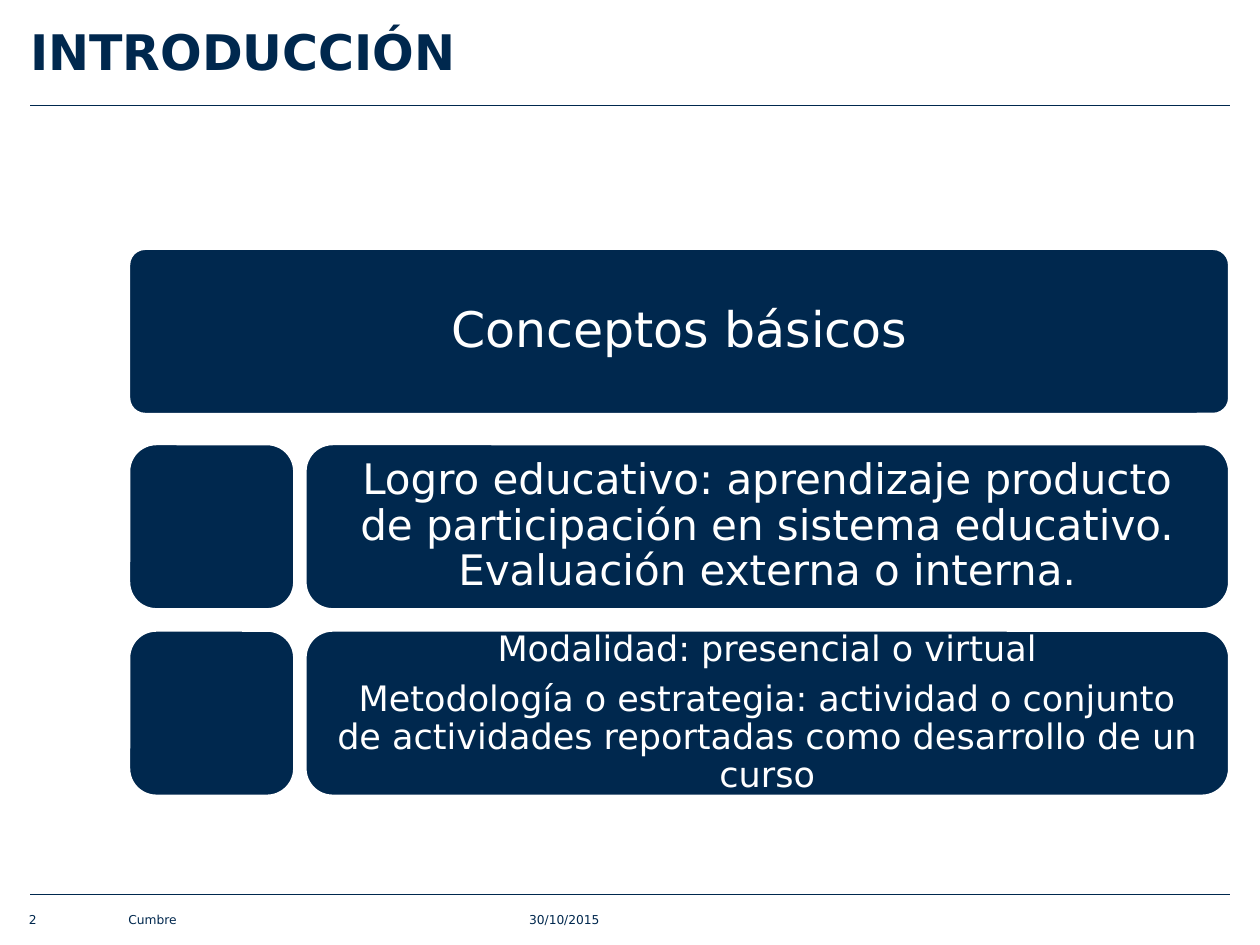
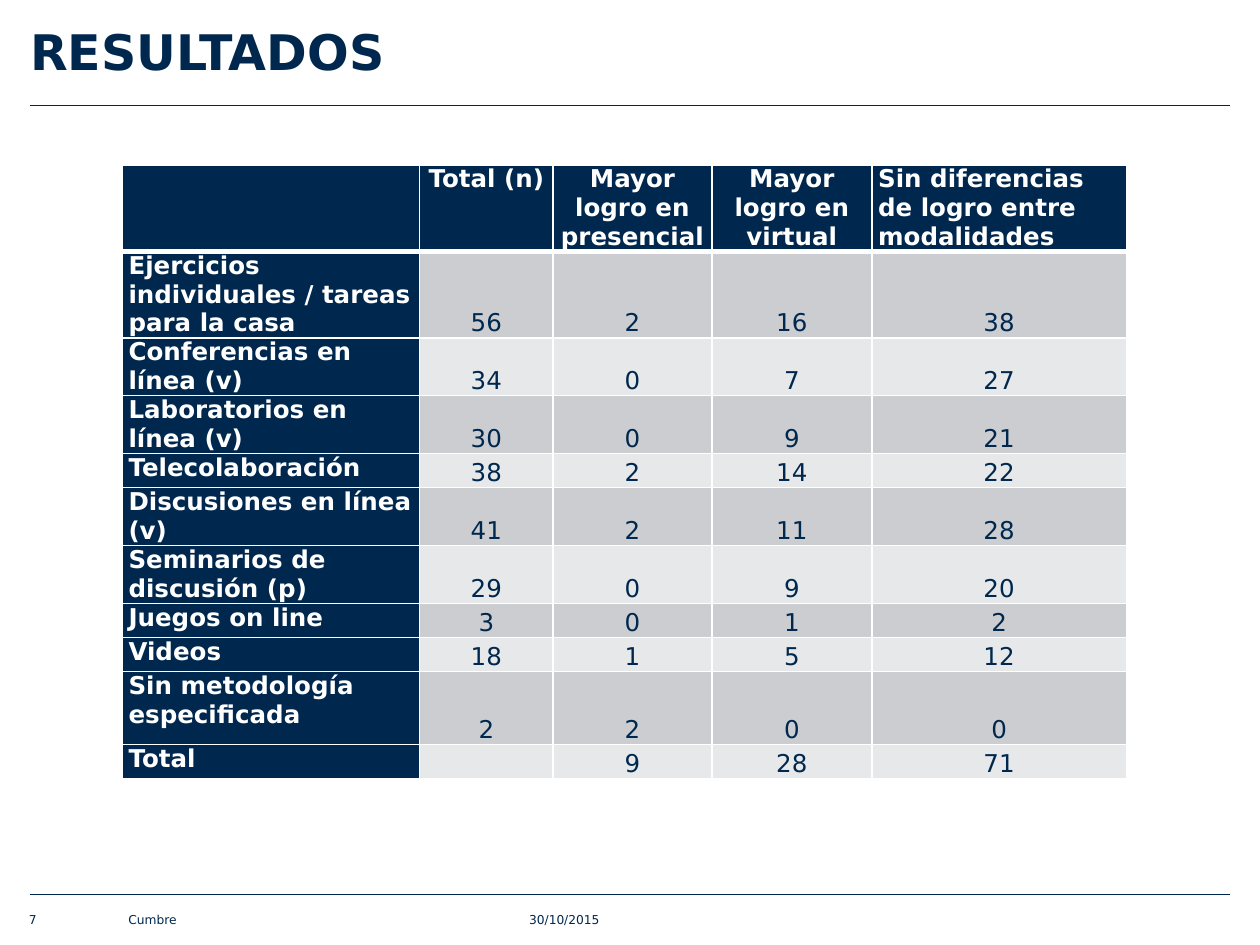
from dataclasses import dataclass

import pptx
import pptx.dml.color
import pptx.enum.shapes
import pptx.enum.text
import pptx.oxml
import pptx.oxml.ns
import pptx.util
from lxml import etree
from pptx.util import Inches

FONT = "DejaVu Sans"
NAVY = "00284E"
WHITE = "FFFFFF"
BANDS = ("CCCDD0", "E7E8E9")
LEFT, RIGHT = 0.24, 9.76

ALIGN = pptx.enum.text.PP_ALIGN
ANCHOR = pptx.enum.text.MSO_ANCHOR
SHAPE = pptx.enum.shapes.MSO_SHAPE


@dataclass
class Footer:
    text: str
    left: float
    width: float


@dataclass
class Card:
    left: float
    top: float
    corner: float
    inset_x: float = 0
    inset_y: float = 0
    size: float = 0
    texts: tuple[str, ...] = ()


CARD_HEIGHT = 1.32
CARD_RIGHT = 9.76
CARD_LEFT, DETAIL_LEFT = 1.02, 2.42
CORNER = 0.167

CARDS = [
    Card(CARD_LEFT, 1.97, 0.1, 0.06, 0.04, 28, ("Conceptos básicos",)),
    Card(CARD_LEFT, 3.52, CORNER),
    Card(DETAIL_LEFT, 3.52, CORNER, 0.19, 0.19, 24, (
        "Logro educativo: aprendizaje producto de participación en sistema "
        "educativo. Evaluación externa o interna.",)),
    Card(CARD_LEFT, 5, CORNER),
    Card(DETAIL_LEFT, 5, CORNER, 0.16, 0.16, 20, (
        "Modalidad: presencial o virtual",
        "Metodología o estrategia: actividad o conjunto de actividades "
        "reportadas como desarrollo de un curso")),
]

COLUMN_WIDTHS = (2.36, 1.06, 1.26, 1.27, 2.02)
ROW_HEIGHTS = (0.68, 0.68, 0.46, 0.46, 0.27, 0.46, 0.46, 0.27, 0.27, 0.58, 0.27)
RESULTS = [
    ("", "Total (n)", "Mayor logro en presencial", "Mayor logro en virtual",
     "Sin diferencias de logro entre modalidades"),
    ("Ejercicios individuales / tareas para la casa", "56", "2", "16", "38"),
    ("Conferencias en línea (v)", "34", "0", "7", "27"),
    ("Laboratorios en línea (v)", "30", "0", "9", "21"),
    ("Telecolaboración", "38", "2", "14", "22"),
    ("Discusiones en línea (v)", "41", "2", "11", "28"),
    ("Seminarios de discusión (p)", "29", "0", "9", "20"),
    ("Juegos on line", "3", "0", "1", "2"),
    ("Videos", "18", "1", "5", "12"),
    ("Sin metodología especificada", "2", "2", "0", "0"),
    ("Total", "", "9", "28", "71"),
]


def color(value: str) -> pptx.dml.color.RGBColor:
    return pptx.dml.color.RGBColor.from_string(value)


def add_run(paragraph, text: str, size: float, ink: str, bold: bool = False) -> None:
    run = paragraph.add_run()
    run.text = text
    run.font.name = FONT
    run.font.size = pptx.util.Pt(size)
    run.font.bold = bold
    run.font.color.rgb = color(ink)


def set_frame(frame, inset_x: float, inset_y: float, anchor) -> None:
    frame.word_wrap = True
    frame.auto_size = pptx.enum.text.MSO_AUTO_SIZE.NONE
    frame.margin_left = frame.margin_right = Inches(inset_x)
    frame.margin_top = frame.margin_bottom = Inches(inset_y)
    frame.vertical_anchor = anchor


# Shared parts: title, rules and footer

def add_rule(slide, top: float) -> None:
    rule = slide.shapes.add_connector(
        pptx.enum.shapes.MSO_CONNECTOR.STRAIGHT,
        Inches(LEFT), Inches(top), Inches(RIGHT), Inches(top))
    rule.line.color.rgb = color(NAVY)
    rule.line.width = pptx.util.Pt(0.5)
    etree.SubElement(rule._element.spPr, pptx.oxml.ns.qn("a:effectLst"))


def add_footer(slide, footer: Footer) -> None:
    box = slide.shapes.add_textbox(
        Inches(footer.left), Inches(7.18), Inches(footer.width), Inches(0.18))
    set_frame(box.text_frame, 0, 0, ANCHOR.BOTTOM)
    add_run(box.text_frame.paragraphs[0], footer.text, 7, NAVY)


def add_slide(presentation, title_text: str, number: int):
    slide = presentation.slides.add_slide(presentation.slide_layouts[5])
    title = slide.shapes.title
    title.left, title.top = Inches(LEFT), Inches(0.17)
    title.width, title.height = Inches(9.53), Inches(0.55)
    set_frame(title.text_frame, 0, 0, ANCHOR.TOP)
    paragraph = title.text_frame.paragraphs[0]
    paragraph.alignment = ALIGN.LEFT
    add_run(paragraph, title_text, 28, NAVY, bold=True)
    for top in (0.84, 7.1):
        add_rule(slide, top)
    for footer in (Footer("30/10/2015", 4.2, 2.33), Footer("Cumbre", 1.02, 3.07),
                   Footer(str(number), 0.23, 0.59)):
        add_footer(slide, footer)
    return slide


# Concept cards

def add_card(slide, card: Card) -> None:
    width = CARD_RIGHT - card.left if card.texts else CARD_HEIGHT
    shape = slide.shapes.add_shape(
        SHAPE.ROUNDED_RECTANGLE, Inches(card.left), Inches(card.top),
        Inches(width), Inches(CARD_HEIGHT))
    shape.adjustments[0] = card.corner
    shape.shadow.inherit = False
    shape.fill.solid()
    shape.fill.fore_color.rgb = color(NAVY)
    shape.line.color.rgb = color(WHITE)
    shape.line.width = pptx.util.Pt(2)
    frame = shape.text_frame
    set_frame(frame, card.inset_x, card.inset_y, ANCHOR.MIDDLE)
    for index, text in enumerate(card.texts):
        paragraph = frame.add_paragraph() if index else frame.paragraphs[0]
        paragraph.alignment = ALIGN.CENTER
        paragraph.line_spacing = 0.9
        paragraph.space_after = pptx.util.Pt(card.size * 0.35)
        add_run(paragraph, text, card.size, WHITE)


# Results table

def set_borders(cell, top: float, bottom: float) -> None:
    properties = cell._tc.get_or_add_tcPr()
    widths = {"lnL": 1, "lnR": 1, "lnT": top, "lnB": bottom}
    for index, (tag, width) in enumerate(widths.items()):
        border = pptx.oxml.parse_xml(
            f'<a:{tag} {pptx.oxml.ns.nsdecls("a")} w="{pptx.util.Pt(width)}">'
            f'<a:solidFill><a:srgbClr val="{WHITE}"/></a:solidFill></a:{tag}>')
        properties.insert(index, border)


def fill_cell(cell, text: str, row: int, column: int) -> None:
    heading = row == 0 or column == 0
    last_heading = row == 0 and column == len(COLUMN_WIDTHS) - 1
    cell.margin_left = cell.margin_right = Inches(0.05)
    cell.margin_top = cell.margin_bottom = 0
    cell.vertical_anchor = ANCHOR.BOTTOM if last_heading or not heading else ANCHOR.TOP
    cell.fill.solid()
    cell.fill.fore_color.rgb = color(NAVY if heading else BANDS[(row - 1) % 2])
    set_borders(cell, 3 if row == 1 else 1, 3 if row == 0 else 1)
    paragraph = cell.text_frame.paragraphs[0]
    paragraph.alignment = ALIGN.LEFT if column == 0 or last_heading else ALIGN.CENTER
    if text:
        add_run(paragraph, text, 14, WHITE if heading else NAVY, bold=heading)
    else:
        # Keeps an empty cell from stretching its row
        etree.SubElement(paragraph._p, pptx.oxml.ns.qn("a:endParaRPr"), sz="1400")


def add_results_table(slide) -> None:
    table = slide.shapes.add_table(
        len(RESULTS), len(COLUMN_WIDTHS), Inches(0.97), Inches(1.31),
        Inches(sum(COLUMN_WIDTHS)), Inches(sum(ROW_HEIGHTS))).table
    for column, width in zip(table.columns, COLUMN_WIDTHS):
        column.width = Inches(width)
    for row, height in zip(table.rows, ROW_HEIGHTS):
        row.height = Inches(height)
    for row_index, values in enumerate(RESULTS):
        for column_index, text in enumerate(values):
            fill_cell(table.cell(row_index, column_index), text, row_index, column_index)


def main() -> None:
    presentation = pptx.Presentation()
    presentation.slide_width, presentation.slide_height = Inches(10), Inches(7.5)
    introduction = add_slide(presentation, "INTRODUCCIÓN", 2)
    for card in CARDS:
        add_card(introduction, card)
    add_results_table(add_slide(presentation, "RESULTADOS", 7))
    presentation.save("out.pptx")


if __name__ == "__main__":
    main()
